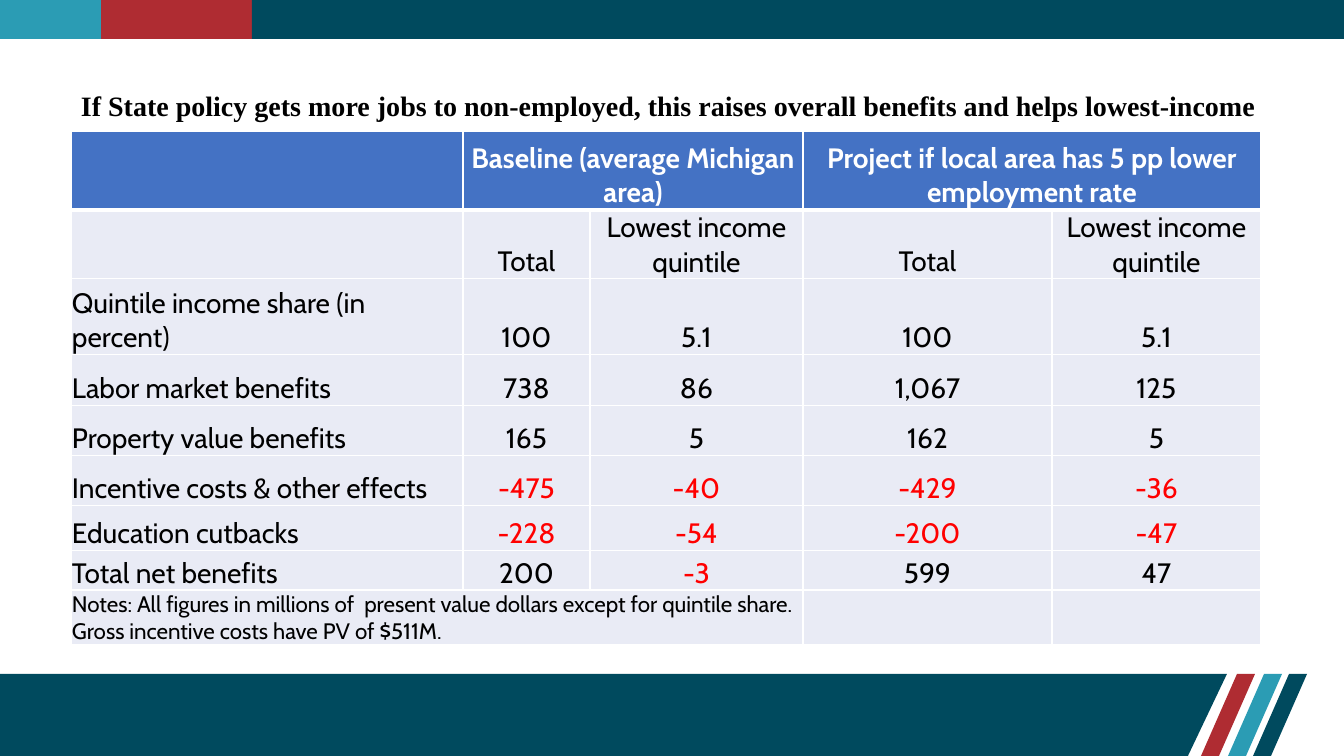
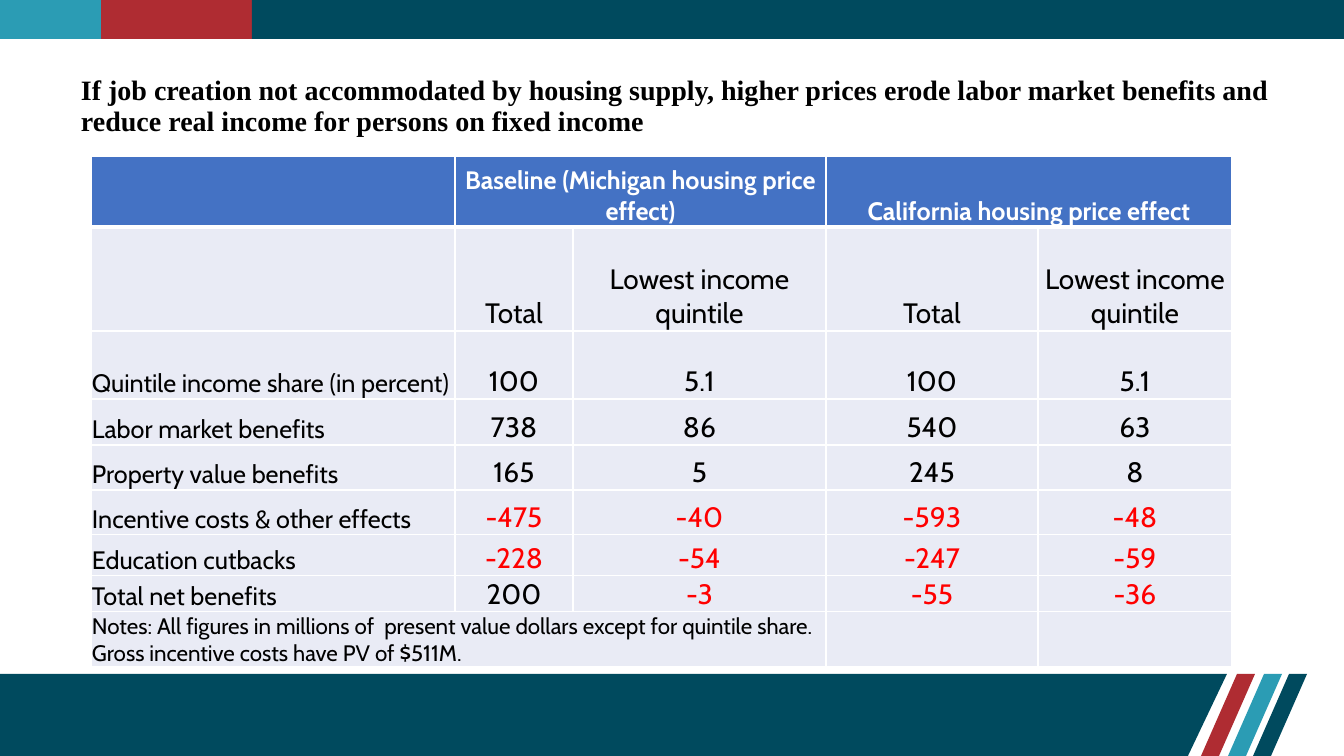
"""Build two slides comparing the benefits of job creation policies."""

import dataclasses
import typing

import pptx
import pptx.dml.color
import pptx.enum.shapes
import pptx.enum.text
import pptx.oxml
import pptx.oxml.ns
import pptx.presentation
import pptx.shapes.autoshape
import pptx.slide
import pptx.table
import pptx.util

SLIDE_WIDTH, SLIDE_HEIGHT = 1344, 756
EMU_PER_PX = 12192000 / SLIDE_WIDTH
COLORS = {
    "navy": "004A5E",
    "red": "AF2C32",
    "teal": "2B9CB4",
    "header": "4472C4",
    "cell": "E9EBF5",
    "negative": "FF0000",
    "black": "000000",
    "white": "FFFFFF",
}
TITLE_FONT, TABLE_FONT = "Times New Roman", "Cabin"
BODY_SIZE, NOTE_SIZE = 20, 16
THIN_BORDER, THICK_BORDER = 1, 3
FOOTER_TOP = 674
STRIPE_RUN, STRIPE_WIDTH = 36, 18

ROW_LABELS = (
    "Quintile income share (in percent)",
    "Labor market benefits",
    "Property value benefits",
    "Incentive costs & other effects",
    "Education cutbacks",
    "Total net benefits",
)
SUBHEADINGS = ("", "Total", "Lowest income quintile", "Total", "Lowest income quintile")
BASELINE = (
    ("100", "5.1"),
    ("738", "86"),
    ("165", "5"),
    ("-475", "-40"),
    ("-228", "-54"),
    ("200", "-3"),
)
NOTES = (
    "Notes: All figures in millions of  present value dollars except for quintile share. "
    "Gross incentive costs have PV of $511M."
)


@dataclasses.dataclass(frozen=True)
class Band:
    left: int
    width: int
    color: str


@dataclasses.dataclass(frozen=True)
class Stripe:
    left: int
    color: str


@dataclasses.dataclass(frozen=True)
class Comparison:
    title: str
    baseline_heading: str
    scenario_heading: str
    scenario: tuple[tuple[str, str], ...]
    left: int
    top: int
    column_widths: tuple[int, ...]
    row_heights: tuple[int, ...]
    label_size: int


TOP_BANDS = (Band(100, 152, "red"), Band(252, 1092, "navy"), Band(0, 101, "teal"))
STRIPES = (Stripe(1201, "red"), Stripe(1228, "teal"), Stripe(1253, "navy"))
COMPARISONS = (
    Comparison(
        title="If State policy gets more jobs to non-employed, this raises overall "
        "benefits and helps lowest-income",
        baseline_heading="Baseline (average Michigan area)",
        scenario_heading="Project if local area has 5 pp lower employment rate",
        scenario=(
            ("100", "5.1"),
            ("1,067", "125"),
            ("162", "5"),
            ("-429", "-36"),
            ("-200", "-47"),
            ("599", "47"),
        ),
        left=71,
        top=131,
        column_widths=(392, 127, 213, 249, 209),
        row_heights=(79, 68, 76, 51, 50, 50, 45, 40, 54),
        label_size=20,
    ),
    Comparison(
        title="If job creation not accommodated by housing supply, higher prices erode "
        "labor market benefits and reduce real income for persons on fixed income",
        baseline_heading="Baseline (Michigan housing price effect)",
        scenario_heading="California housing price effect",
        scenario=(
            ("100", "5.1"),
            ("540", "63"),
            ("245", "8"),
            ("-593", "-48"),
            ("-247", "-59"),
            ("-55", "-36"),
        ),
        left=91,
        top=156,
        column_widths=(364, 118, 253, 212, 194),
        row_heights=(71, 104, 68, 46, 45, 45, 41, 36, 47),
        label_size=18,
    ),
)


def px(length: int) -> pptx.util.Emu:
    return pptx.util.Emu(round(length * EMU_PER_PX))


def rgb(name: str) -> pptx.dml.color.RGBColor:
    return pptx.dml.color.RGBColor.from_string(COLORS[name])


def paint(shape: pptx.shapes.autoshape.Shape, color: str) -> None:
    shape.shadow.inherit = False
    shape.fill.solid()
    shape.fill.fore_color.rgb = rgb(color)
    shape.line.fill.background()


def add_outline(
    slide: pptx.slide.Slide, points: typing.Sequence[tuple[int, int]], color: str
) -> None:
    builder = slide.shapes.build_freeform(*points[0], scale=EMU_PER_PX)
    builder.add_line_segments(points[1:], close=True)
    paint(builder.convert_to_shape(), color)


def add_frame(slide: pptx.slide.Slide) -> None:
    footer = ((0, SLIDE_HEIGHT), (0, FOOTER_TOP), (1227, FOOTER_TOP), (1188, SLIDE_HEIGHT))
    add_outline(slide, footer, "navy")
    for stripe in STRIPES:
        top_left = stripe.left + STRIPE_RUN
        points = (
            (stripe.left, SLIDE_HEIGHT),
            (top_left, FOOTER_TOP),
            (top_left + STRIPE_WIDTH, FOOTER_TOP),
            (stripe.left + STRIPE_WIDTH, SLIDE_HEIGHT),
        )
        add_outline(slide, points, stripe.color)
    for band in TOP_BANDS:
        shape = slide.shapes.add_shape(
            pptx.enum.shapes.MSO_SHAPE.RECTANGLE, px(band.left), 0, px(band.width), px(39)
        )
        paint(shape, band.color)


def add_title(slide: pptx.slide.Slide, title: str) -> None:
    frame = slide.shapes.add_textbox(px(71), px(70), px(1210), px(74)).text_frame
    frame.word_wrap = True
    frame.vertical_anchor = pptx.enum.text.MSO_ANCHOR.MIDDLE
    paragraph = frame.paragraphs[0]
    paragraph.text = title
    paragraph.line_spacing = 0.9
    paragraph.font.name = TITLE_FONT
    paragraph.font.size = pptx.util.Pt(20)
    paragraph.font.bold = True
    paragraph.font.color.rgb = rgb("black")


def set_borders(cell: pptx.table._Cell, top: int, bottom: int) -> None:
    properties = cell._tc.get_or_add_tcPr()
    widths = {"lnL": THIN_BORDER, "lnR": THIN_BORDER, "lnT": top, "lnB": bottom}
    for position, (tag, width) in enumerate(widths.items()):
        border = pptx.oxml.parse_xml(
            f'<a:{tag} {pptx.oxml.ns.nsdecls("a")} w="{pptx.util.Pt(width)}">'
            f'<a:solidFill><a:srgbClr val="{COLORS["white"]}"/></a:solidFill></a:{tag}>'
        )
        properties.insert(position, border)


def style_cell(
    cell: pptx.table._Cell, text: str, size: int, centered: bool, is_header: bool
) -> None:
    cell.fill.solid()
    cell.fill.fore_color.rgb = rgb("header" if is_header else "cell")
    cell.margin_left = cell.margin_right = cell.margin_top = px(1)
    cell.margin_bottom = 0
    cell.vertical_anchor = pptx.enum.text.MSO_ANCHOR.BOTTOM
    paragraph = cell.text_frame.paragraphs[0]
    paragraph.text = text
    alignment = pptx.enum.text.PP_ALIGN
    paragraph.alignment = alignment.CENTER if centered else alignment.LEFT
    paragraph.font.name = TABLE_FONT
    paragraph.font.size = pptx.util.Pt(size)
    paragraph.font.bold = is_header
    color = "white" if is_header else "negative" if text.startswith("-") else "black"
    paragraph.font.color.rgb = rgb(color)


def add_comparison_table(slide: pptx.slide.Slide, comparison: Comparison) -> None:
    rows = [
        ("", comparison.baseline_heading, "", comparison.scenario_heading, ""),
        SUBHEADINGS,
        *(
            (label, *baseline, *scenario)
            for label, baseline, scenario in zip(ROW_LABELS, BASELINE, comparison.scenario)
        ),
        (NOTES, "", "", "", ""),
    ]
    last_row = len(rows) - 1
    table = slide.shapes.add_table(
        len(rows),
        len(SUBHEADINGS),
        px(comparison.left),
        px(comparison.top),
        px(sum(comparison.column_widths)),
        px(sum(comparison.row_heights)),
    ).table
    table.horz_banding = False
    for column, width in zip(table.columns, comparison.column_widths):
        column.width = px(width)
    for row, height in zip(table.rows, comparison.row_heights):
        row.height = px(height)
    for row_index, texts in enumerate(rows):
        for column_index, text in enumerate(texts):
            cell = table.cell(row_index, column_index)
            is_header = row_index == 0
            size = BODY_SIZE
            if row_index == last_row:
                size = NOTE_SIZE
            elif is_header or column_index == 0:
                size = comparison.label_size
            style_cell(cell, text, size, column_index > 0, is_header)
            set_borders(
                cell,
                top=THICK_BORDER if row_index == 1 else THIN_BORDER,
                bottom=THICK_BORDER if is_header else THIN_BORDER,
            )
    for row_index, first, last in ((0, 1, 2), (0, 3, 4), (last_row, 0, 2)):
        table.cell(row_index, first).merge(table.cell(row_index, last))


def add_comparison_slide(
    presentation: pptx.presentation.Presentation, comparison: Comparison
) -> None:
    slide = presentation.slides.add_slide(presentation.slide_layouts[6])
    add_frame(slide)
    add_title(slide, comparison.title)
    add_comparison_table(slide, comparison)


def main() -> None:
    presentation = pptx.Presentation()
    presentation.slide_width = px(SLIDE_WIDTH)
    presentation.slide_height = px(SLIDE_HEIGHT)
    for comparison in COMPARISONS:
        add_comparison_slide(presentation, comparison)
    presentation.save("out.pptx")


if __name__ == "__main__":
    main()
